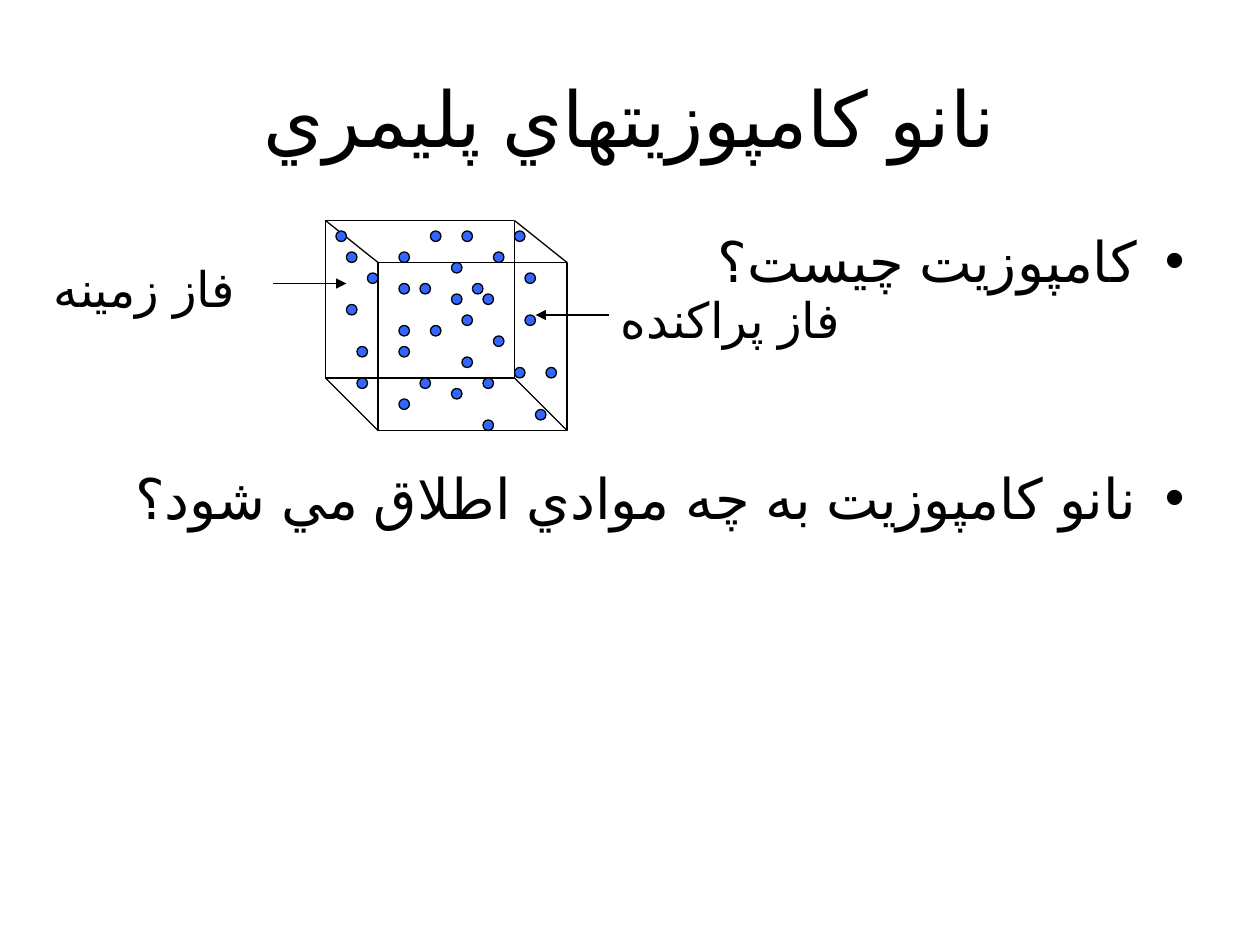
from lxml import etree
from pptx import Presentation
from pptx.dml.color import RGBColor
from pptx.enum import shapes, text
from pptx.oxml.ns import qn
from pptx.util import Inches, Pt


def paint(part, color):
    part.solid()
    part.fore_color.rgb = RGBColor.from_string(color)


def draw_line(group, start, end, arrow=False):
    points = [Inches(v / 12) for v in (*start, *end)]
    line = group.shapes.add_connector(shapes.MSO_CONNECTOR.STRAIGHT, *points)
    paint(line.line.fill, "000000")
    line.line.width = Pt(0.75)
    props = line._element.spPr
    if arrow:
        etree.SubElement(line.line._get_or_add_ln(), qn("a:tailEnd"), type="triangle")
    etree.SubElement(props, qn("a:effectLst"))


deck = Presentation()
deck.slide_width, deck.slide_height = Inches(10), Inches(7.5)
slide = deck.slides.add_slide(deck.slide_layouts[1])

title, body = slide.placeholders
title.left, title.top, title.width, title.height = map(Inches, (0.5, 0.3, 9, 1.25))
title.text_frame.text = "نانو کامپوزيتهاي پليمري"
body.left, body.top, body.width, body.height = map(Inches, (0.5, 1.75, 9, 4.95))
body.text_frame.text = "کامپوزيت چيست؟\nنانو کامپوزيت به چه موادي اطلاق مي شود؟"
head = title.text_frame.paragraphs[0]
items = body.text_frame.paragraphs
head.alignment = text.PP_ALIGN.CENTER
for item in items:
    item.alignment = text.PP_ALIGN.RIGHT
    item._p.get_or_add_pPr().set("rtl", "1")
items[1].space_before = Pt(97)
styles = [(head, "Calibri", 44), (items[0], "Calibri", 32), (items[1], "Calibri", 32)]

cube = slide.shapes.add_group_shape()
face = cube.shapes.add_shape(
    shapes.MSO_SHAPE.RECTANGLE, Inches(3), Inches(25 / 12), Inches(1.5), Inches(16 / 12))
face.shadow.inherit = False
paint(face.fill, "FFFFFF")
paint(face.line.fill, "000000")
face.line.width = Pt(0.75)

back = [(31, 21), (49, 21), (49, 36), (31, 36)]
front = [(36, 25), (54, 25), (54, 41), (36, 41)]
for i in range(4):
    draw_line(cube, back[i], back[(i + 1) % 4])
    if i != 2:
        draw_line(cube, back[i], front[i])
draw_line(cube, back[2], front[2])

dots = {
    22: [32, 41, 44, 49], 24: [33, 38, 47], 25: [43], 26: [35, 50],
    27: [38, 40, 45], 28: [43, 46], 29: [33], 30: [44, 50], 31: [38, 41],
    32: [47], 33: [34, 38], 34: [44], 35: [49, 52], 36: [34, 40, 46],
    37: [43], 38: [38], 39: [51], 40: [46],
}
for row, cols in dots.items():
    for col in cols:
        dot = cube.shapes.add_shape(
            shapes.MSO_SHAPE.OVAL, Inches(col / 12), Inches(row / 12),
            Inches(1 / 12), Inches(1 / 12))
        dot.shadow.inherit = False
        paint(dot.fill, "3366FF")
        paint(dot.line.fill, "000000")
        dot.line.width = Pt(0.75)

labels = [("فاز پراکنده", 4.83, 2.25, 2.58), ("فاز زمینه", 0.33, 2, 1.75)]
for words, left, top, width in labels:
    box = cube.shapes.add_textbox(Inches(left), Inches(top), Inches(width), Inches(0.57))
    frame = box.text_frame
    frame.word_wrap = True
    frame.auto_size = text.MSO_AUTO_SIZE.SHAPE_TO_FIT_TEXT
    frame.text = words
    para = frame.paragraphs[0]
    para.space_before = Pt(14)
    styles.append((para, "Arial", 28))

for para, face, size in styles:
    para.font.name = face
    para.font.size = Pt(size)
    paint(para.font.fill, "000000")
    props = para.runs[0]._r.get_or_add_rPr()
    props.set("lang", "fa-IR")
    etree.SubElement(props, qn("a:cs"), typeface="Arial")

draw_line(cube, (58, 30), (51, 30), arrow=True)
draw_line(cube, (26, 27), (33, 27), arrow=True)

deck.save("out.pptx")
